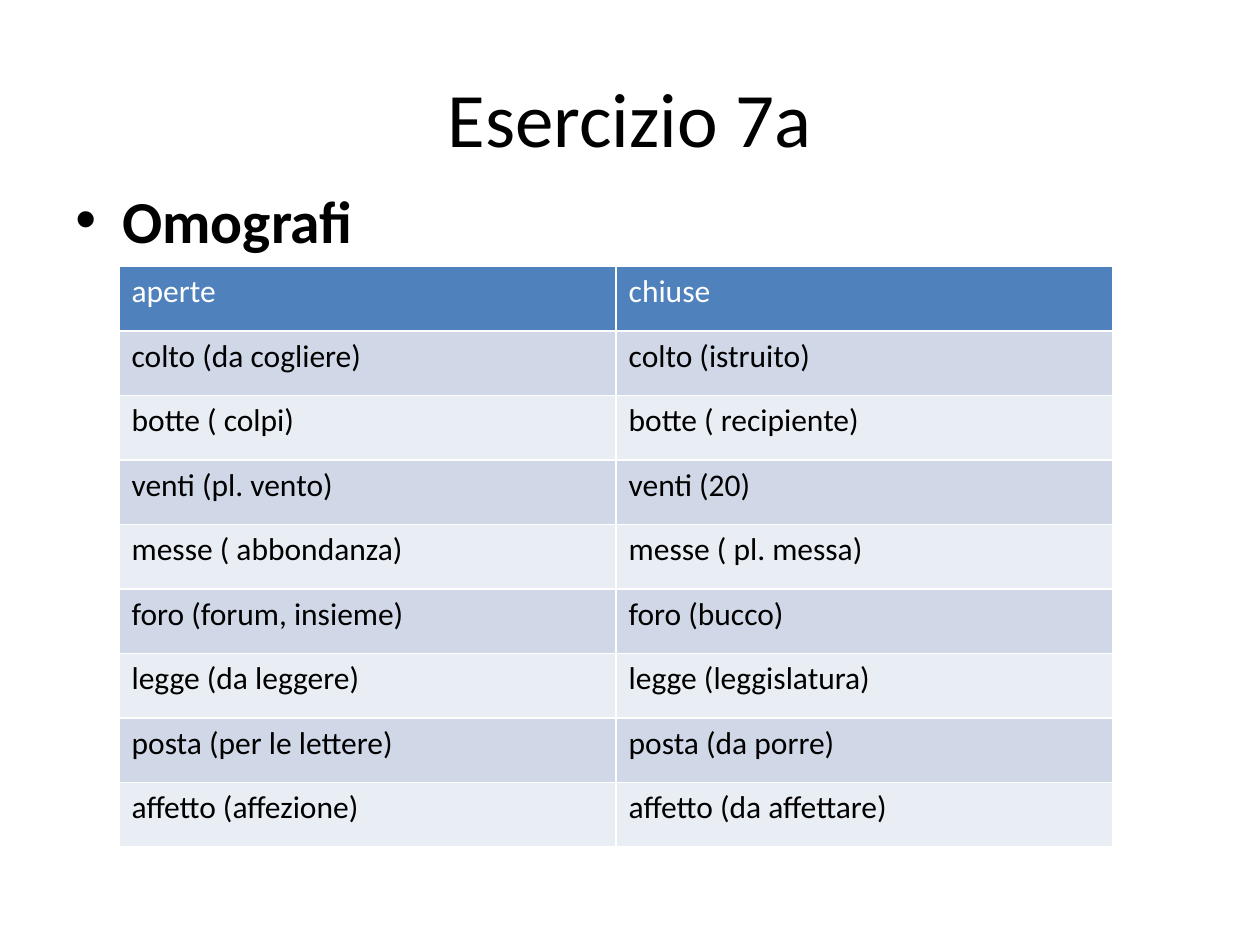
from lxml.etree import SubElement
from pptx import Presentation
from pptx.dml.color import RGBColor
from pptx.enum.text import MSO_ANCHOR, PP_ALIGN
from pptx.oxml.ns import qn
from pptx.util import Cm, Pt

FONT = "Calibri"
COLORS = {
    "text": "000000",
    "header_text": "FFFFFF",
    "header": "4F81BD",
    "odd_row": "D0D8E8",
    "even_row": "E9EDF4",
    "border": "FFFFFF",
}
HOMOGRAPHS = [
    ("aperte", "chiuse"),
    ("colto (da cogliere)", "colto (istruito)"),
    ("botte ( colpi)", "botte ( recipiente)"),
    ("venti (pl. vento)", "venti (20)"),
    ("messe ( abbondanza)", "messe ( pl. messa)"),
    ("foro (forum, insieme)", "foro (bucco)"),
    ("legge (da leggere)", "legge (leggislatura)"),
    ("posta (per le lettere)", "posta (da porre)"),
    ("affetto (affezione)", "affetto (da affettare)"),
]


def rgb(name):
    return RGBColor.from_string(COLORS[name])


def format_runs(paragraph, size, color="text", bold=False):
    for run in paragraph.runs:
        run.font.name = FONT
        run.font.size = Pt(size)
        run.font.bold = bold
        run.font.color.rgb = rgb(color)


def add_text(slide, box, text, size, anchor, bold=False):
    """Add a one-paragraph text box and return its paragraph."""
    text_frame = slide.shapes.add_textbox(*map(Cm, box)).text_frame
    text_frame.word_wrap = True
    text_frame.vertical_anchor = anchor
    text_frame.text = text
    paragraph = text_frame.paragraphs[0]
    format_runs(paragraph, size, bold=bold)
    return paragraph


def add_title(slide, box, text):
    paragraph = add_text(slide, box, text, 44, MSO_ANCHOR.MIDDLE)
    paragraph.alignment = PP_ALIGN.CENTER


def add_bullet(slide, box, text):
    paragraph = add_text(slide, box, text, 34, MSO_ANCHOR.TOP, bold=True)
    properties = paragraph._p.get_or_add_pPr()
    indent = Cm(0.95)
    properties.set("marL", str(indent))
    properties.set("indent", str(-indent))
    SubElement(properties, qn("a:buFont"), typeface="Arial")
    SubElement(properties, qn("a:buChar"), char="•")


def add_borders(cell):
    """Draw all four cell edges; must run before the cell is filled."""
    properties = cell._tc.get_or_add_tcPr()
    for edge in ("lnL", "lnR", "lnT", "lnB"):
        line = SubElement(properties, qn(f"a:{edge}"), w=str(Pt(1)))
        fill = SubElement(line, qn("a:solidFill"))
        SubElement(fill, qn("a:srgbClr"), val=COLORS["border"])


def add_word_table(slide, box, rows):
    left, top, width, height = map(Cm, box)
    column_count = len(rows[0])
    table = slide.shapes.add_table(
        len(rows), column_count, left, top, width, height
    ).table
    for column in table.columns:
        column.width = width // column_count
    for row_index, words in enumerate(rows):
        table.rows[row_index].height = height // len(rows)
        if row_index == 0:
            fill, color = "header", "header_text"
        else:
            fill, color = ("odd_row" if row_index % 2 else "even_row"), "text"
        for column_index, word in enumerate(words):
            cell = table.cell(row_index, column_index)
            add_borders(cell)
            cell.fill.solid()
            cell.fill.fore_color.rgb = rgb(fill)
            cell.text_frame.text = word
            format_runs(cell.text_frame.paragraphs[0], 18, color)


def main():
    presentation = Presentation()
    presentation.slide_width = Cm(25.4)
    presentation.slide_height = Cm(19.05)
    slide = presentation.slides.add_slide(presentation.slide_layouts[6])
    add_title(slide, (1.27, 0.76, 22.86, 3.18), "Esercizio 7a")
    add_bullet(slide, (1.27, 3.58, 22.86, 14.3), "Omografi")
    add_word_table(slide, (2.4, 5.37, 20.04, 11.7), HOMOGRAPHS)
    presentation.save("out.pptx")


if __name__ == "__main__":
    main()
